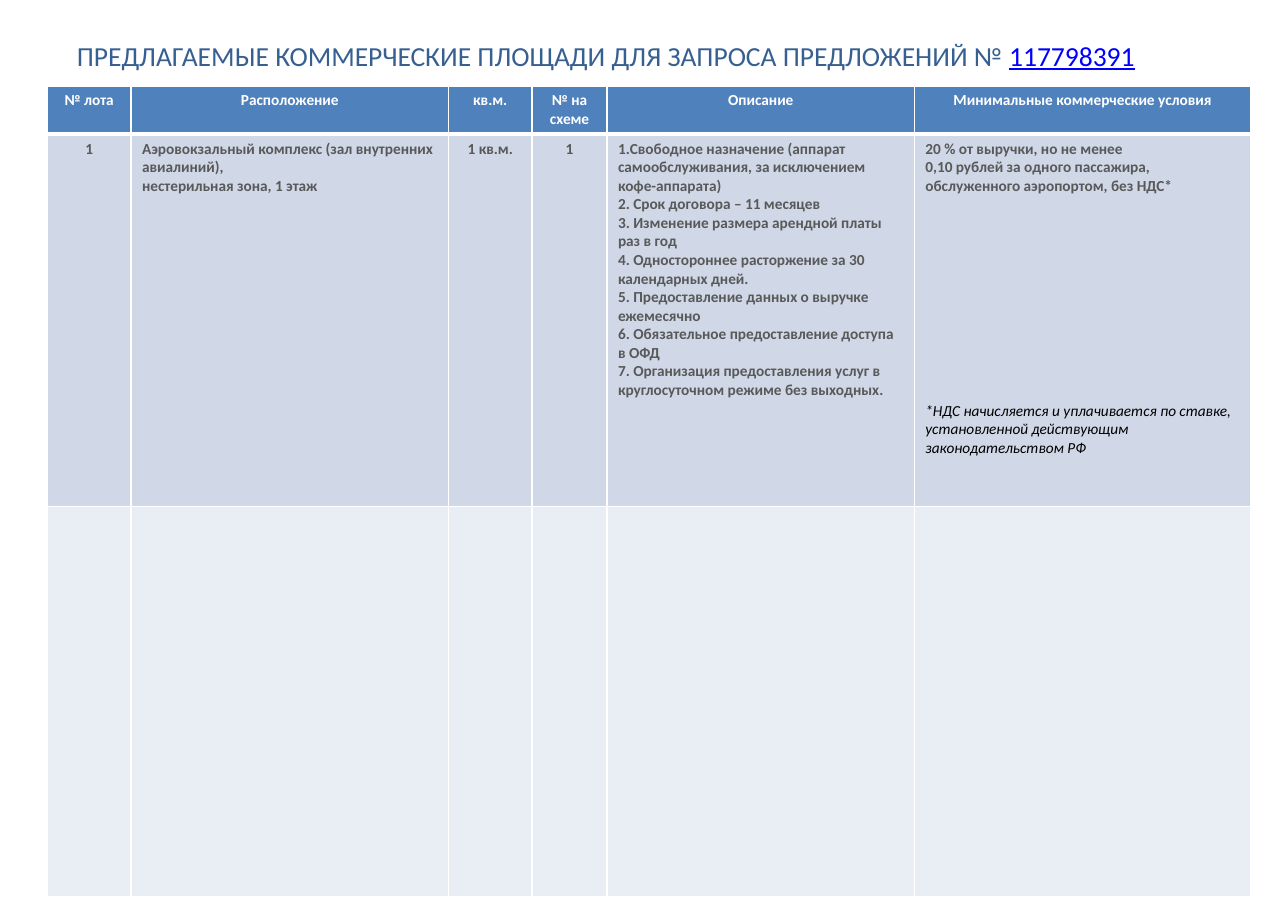
from lxml import etree
from pptx import Presentation
from pptx.dml.color import RGBColor
from pptx.enum import text
from pptx.oxml import ns
from pptx.util import Inches, Pt

TITLE = "ПРЕДЛАГАЕМЫЕ КОММЕРЧЕСКИЕ ПЛОЩАДИ ДЛЯ ЗАПРОСА ПРЕДЛОЖЕНИЙ № "
NUMBER = "117798391"
HEADS = ["№ лота", "Расположение", "кв.м.", "№ на схеме", "Описание",
         "Минимальные коммерческие условия"]
LOT = [
    "1",
    "Аэровокзальный комплекс (зал внутренних авиалиний),\n"
    "нестерильная зона, 1 этаж",
    "1 кв.м.",
    "1",
    "1.Свободное назначение (аппарат самообслуживания, за исключением кофе-аппарата)\n"
    "2. Срок договора – 11 месяцев\n"
    "3. Изменение размера арендной платы раз в год\n"
    "4. Одностороннее расторжение за 30 календарных дней.\n"
    "5. Предоставление данных о выручке ежемесячно\n"
    "6. Обязательное предоставление доступа в ОФД\n"
    "7. Организация предоставления услуг в круглосуточном режиме без выходных.",
    "20 % от выручки, но не менее\n"
    "0,10 рублей за одного пассажира, обслуженного аэропортом, без НДС*\n"
    "*НДС начисляется и уплачивается по ставке, установленной действующим "
    "законодательством РФ",
]
ROWS = [HEADS, LOT, [""] * len(HEADS)]
WIDTHS = [0.76, 2.88, 0.76, 0.68, 2.79, 3.05]
HEIGHTS = [0.43, 3.38, 3.54]
CENTRED = {0, 2, 3}

WHITE = RGBColor(0xFF, 0xFF, 0xFF)
BLACK = RGBColor(0, 0, 0)
GREY = RGBColor(0x59, 0x59, 0x59)
NAVY = RGBColor(0x37, 0x60, 0x92)
LINK = RGBColor(0, 0, 0xFF)
FILLS = [RGBColor(0x4F, 0x81, 0xBD), RGBColor(0xD0, 0xD8, 0xE8),
         RGBColor(0xE9, 0xED, 0xF4)]
INKS = [WHITE, GREY, GREY]


def style(font, size, color, bold=False):
    font.name = "Calibri"
    font.size = Pt(size)
    font.bold = bold
    font.color.rgb = color


def edge(cell, widths):
    props = cell._tc.get_or_add_tcPr()
    for i, (side, width) in enumerate(widths.items()):
        line = etree.Element(ns.qn("a:ln" + side), w=str(Pt(width)))
        fill = etree.SubElement(line, ns.qn("a:solidFill"))
        etree.SubElement(fill, ns.qn("a:srgbClr"), val=str(WHITE))
        props.insert(i, line)


def fill_cell(cell, row, col):
    cell.fill.solid()
    cell.fill.fore_color.rgb = FILLS[row]
    edge(cell, {"L": 1, "R": 1, "T": 3 if row == 1 else 1,
                "B": 3 if row == 0 else 1})
    cell.text_frame.text = ROWS[row][col]
    for para in cell.text_frame.paragraphs:
        if row == 0 or col in CENTRED:
            para.alignment = text.PP_ALIGN.CENTER
        for run in para.runs:
            style(run.font, 10, INKS[row], True)


def add_lots(slide):
    frame = slide.shapes.add_table(
        len(ROWS), len(HEADS), Inches(0.43), Inches(0.78),
        Inches(sum(WIDTHS)), Inches(sum(HEIGHTS)))
    table = frame.table
    for col, width in zip(table.columns, WIDTHS):
        col.width = Inches(width)
    for row, height in zip(table.rows, HEIGHTS):
        row.height = Inches(height)
    for row in range(len(ROWS)):
        for col in range(len(HEADS)):
            fill_cell(table.cell(row, col), row, col)
    note = table.cell(1, 5).text_frame.paragraphs[-1]
    note.space_before = Pt(135)
    style(note.runs[0].font, 10, BLACK)
    note.runs[0].font.italic = True


def add_title(slide):
    box = slide.shapes.add_textbox(
        Inches(0.6), Inches(0.3), Inches(10.67), Inches(0.68))
    box.text_frame.word_wrap = True
    para = box.text_frame.paragraphs[0]
    for words, color in [(TITLE, NAVY), (NUMBER, LINK)]:
        run = para.add_run()
        run.text = words
        style(run.font, 18, color)
    run.font.underline = True


def main():
    deck = Presentation()
    deck.slide_width = Inches(11.69)
    deck.slide_height = Inches(8.27)
    slide = deck.slides.add_slide(deck.slide_layouts[6])
    add_lots(slide)
    add_title(slide)
    deck.save("out.pptx")


if __name__ == "__main__":
    main()
